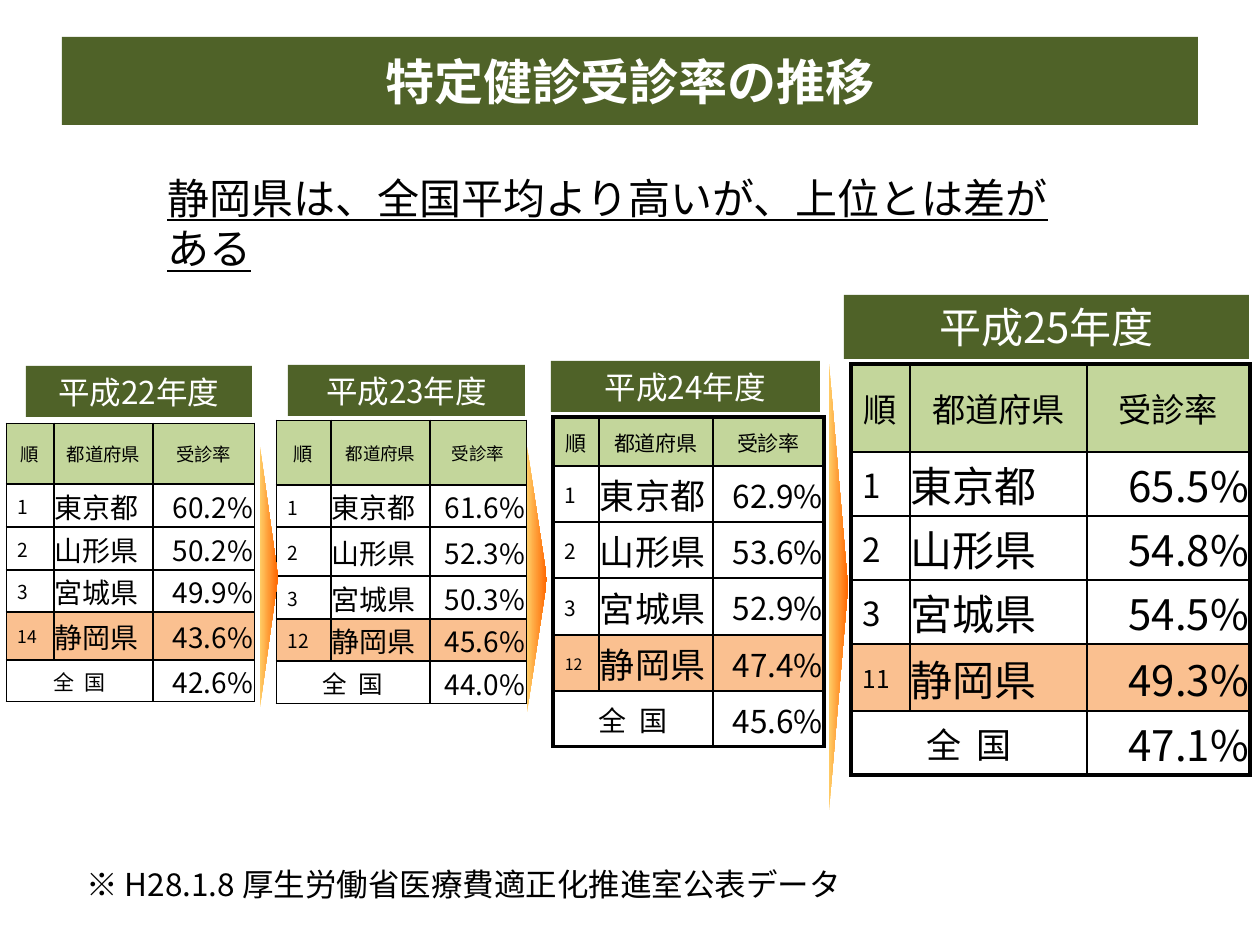
import pptx
import pptx.util
import pptx.dml.color
import pptx.enum.shapes
import pptx.enum.text
import pptx.oxml.ns
from dataclasses import dataclass
from lxml import etree

RGBColor = pptx.dml.color.RGBColor
Pt = pptx.util.Pt
ALIGN = pptx.enum.text.PP_ALIGN
MIDDLE = pptx.enum.text.MSO_ANCHOR.MIDDLE
SHAPES = pptx.enum.shapes.MSO_SHAPE

EMU_PER_PX = 914400 / 126
FONT = "Noto Sans CJK JP"
DARK_GREEN = RGBColor(0x4F, 0x62, 0x28)
LIGHT_GREEN = RGBColor(0xC3, 0xD6, 0x9B)
PEACH = RGBColor(0xFA, 0xC0, 0x90)
YELLOW = RGBColor(0xFF, 0xCC, 0x66)
ORANGE = RGBColor(0xFF, 0x66, 0x00)
BLACK = RGBColor(0, 0, 0)
WHITE = RGBColor(0xFF, 0xFF, 0xFF)

HEADINGS = ("順", "都道府県", "受診率")
PREFECTURES = ("東京都", "山形県", "宮城県", "静岡県")
SHIZUOKA_ROW = 4
TOTAL_ROW = 5


@dataclass
class Year:
    title: str
    banner: tuple
    banner_size: int
    origin: tuple
    columns: tuple
    rows: tuple
    shizuoka_rank: str
    rates: tuple
    heading_sizes: tuple
    rank_size: int
    shizuoka_rank_size: int
    name_size: int
    rate_size: int
    total_size: int
    outline: float


YEARS = (
    Year("平成24年度", (551, 361, 269, 51), 18, (553, 417),
         (46, 114, 111), (49, 56, 56, 57, 56, 56), "12",
         ("62.9%", "53.6%", "52.9%", "47.4%", "45.6%"),
         (12, 12, 12), 12, 9, 20, 18, 16, 2.25),
    Year("平成23年度", (288, 365, 237, 51), 18, (276, 420),
         (55, 99, 96), (65, 42, 49, 43, 42, 43), "12",
         ("61.6%", "52.3%", "50.3%", "45.6%", "44.0%"),
         (11, 10, 10), 11, 11, 16, 16, 14, 0.5),
    Year("平成22年度", (26, 366, 226, 51), 18, (6, 423),
         (48, 99, 101), (61, 43, 43, 42, 48, 39), "14",
         ("60.2%", "50.2%", "49.9%", "43.6%", "42.6%"),
         (10.5, 10.5, 10.5), 11, 10, 16, 16, 12, 0.5),
    Year("平成25年度", (844, 295, 405, 64), 24, (851, 364),
         (59, 177, 163), (88, 64, 64, 64, 67, 64), "11",
         ("65.5%", "54.8%", "54.5%", "49.3%", "47.1%"),
         (19, 19, 19), 19, 14, 24, 24, 20, 2.25),
)
ARROWS = ((829, 364, 19, 446), (527, 447, 20, 265), (260, 447, 18, 260))


def px(length):
    return pptx.util.Emu(round(length * EMU_PER_PX))


def place(box):
    return [px(length) for length in box]


def write(text_frame, text, size, color, align, font=FONT):
    """Put one paragraph in the frame and return its font."""
    paragraph = text_frame.paragraphs[0]
    paragraph.text = text
    paragraph.alignment = align
    paragraph.font.size = Pt(size)
    paragraph.font.name = font
    paragraph.font.color.rgb = color
    return paragraph.font


def add_banner(slide, box, text, size):
    shape = slide.shapes.add_shape(SHAPES.RECTANGLE, *place(box))
    shape.shadow.inherit = False
    shape.fill.solid()
    shape.fill.fore_color.rgb = DARK_GREEN
    shape.line.fill.background()
    shape.text_frame.word_wrap = True
    shape.text_frame.vertical_anchor = MIDDLE
    return write(shape.text_frame, text, size, WHITE, ALIGN.CENTER)


def add_note(slide, box, text, size, font):
    text_frame = slide.shapes.add_textbox(*place(box)).text_frame
    text_frame.word_wrap = True
    return write(text_frame, text, size, BLACK, ALIGN.LEFT, font)


def add_arrow(slide, box):
    shape = slide.shapes.add_shape(SHAPES.RIGHT_ARROW, *place(box))
    shape.shadow.inherit = False
    shape.adjustments[0] = 0.54
    shape.adjustments[1] = 1
    shape.line.fill.background()
    shape.fill.gradient()
    shape.fill.gradient_angle = 0
    for stop, color in zip(shape.fill.gradient_stops, (YELLOW, ORANGE)):
        stop.color.rgb = color


def set_borders(cell, widths):
    """Draw black borders; widths are points for left, right, top, bottom."""
    properties = cell._tc.get_or_add_tcPr()
    for index, (side, width) in enumerate(zip("LRTB", widths)):
        line = etree.Element(pptx.oxml.ns.qn(f"a:ln{side}"), w=str(Pt(width)))
        fill = etree.SubElement(line, pptx.oxml.ns.qn("a:solidFill"))
        etree.SubElement(fill, pptx.oxml.ns.qn("a:srgbClr"), val=str(BLACK))
        properties.insert(index, line)


def format_cell(cell, row, column, outline):
    cell.vertical_anchor = MIDDLE
    cell.margin_left = px(12 if column == 0 and 0 < row < TOTAL_ROW else 1)
    cell.margin_right = cell.margin_top = px(1)
    cell.margin_bottom = 0
    if row in (0, SHIZUOKA_ROW):
        cell.fill.solid()
        cell.fill.fore_color.rgb = PEACH if row else LIGHT_GREEN
    else:
        cell.fill.background()
    at_edge = (column == 0, column == 2, row == 0, row == TOTAL_ROW)
    set_borders(cell, [outline if edge else 1 for edge in at_edge])


def add_year_table(slide, year):
    size = (sum(year.columns), sum(year.rows))
    table = slide.shapes.add_table(6, 3, *place(year.origin + size)).table
    table.first_row = table.horz_banding = False
    for column, width in zip(table.columns, year.columns):
        column.width = px(width)
    for row, height in zip(table.rows, year.rows):
        row.height = px(height)
    for row in range(6):
        for column in range(3):
            format_cell(table.cell(row, column), row, column, year.outline)
    table.cell(TOTAL_ROW, 0).merge(table.cell(TOTAL_ROW, 1))

    def fill_in(row, column, text, size, align):
        write(table.cell(row, column).text_frame, text, size, BLACK, align)

    for column, heading in enumerate(HEADINGS):
        fill_in(0, column, heading, year.heading_sizes[column], ALIGN.CENTER)
    for row, prefecture in enumerate(PREFECTURES, 1):
        if row == SHIZUOKA_ROW:
            rank, rank_size = year.shizuoka_rank, year.shizuoka_rank_size
        else:
            rank, rank_size = str(row), year.rank_size
        fill_in(row, 0, rank, rank_size, ALIGN.LEFT)
        fill_in(row, 1, prefecture, year.name_size, ALIGN.LEFT)
    fill_in(TOTAL_ROW, 0, "全  国", year.total_size, ALIGN.CENTER)
    for row, rate in enumerate(year.rates, 1):
        fill_in(row, 2, rate, year.rate_size, ALIGN.RIGHT)


def main():
    presentation = pptx.Presentation()
    presentation.slide_width, presentation.slide_height = px(1260), px(945)
    slide = presentation.slides.add_slide(presentation.slide_layouts[6])
    title = add_banner(slide, (62, 37, 1136, 88), "特定健診受診率の推移", 28)
    title.bold = True
    for year in YEARS:
        add_year_table(slide, year)
        add_banner(slide, year.banner, year.title, year.banner_size)
    for box in ARROWS:
        add_arrow(slide, box)
    add_note(slide, (74, 859, 1131, 50),
             "※ H28.1.8 厚生労働省医療費適正化推進室公表データ", 18, FONT)
    message = add_note(slide, (155, 166, 936, 64),
                       "静岡県は、全国平均より高いが、上位とは差がある", 24, "Calibri")
    message.underline = True
    presentation.save("out.pptx")


if __name__ == "__main__":
    main()
